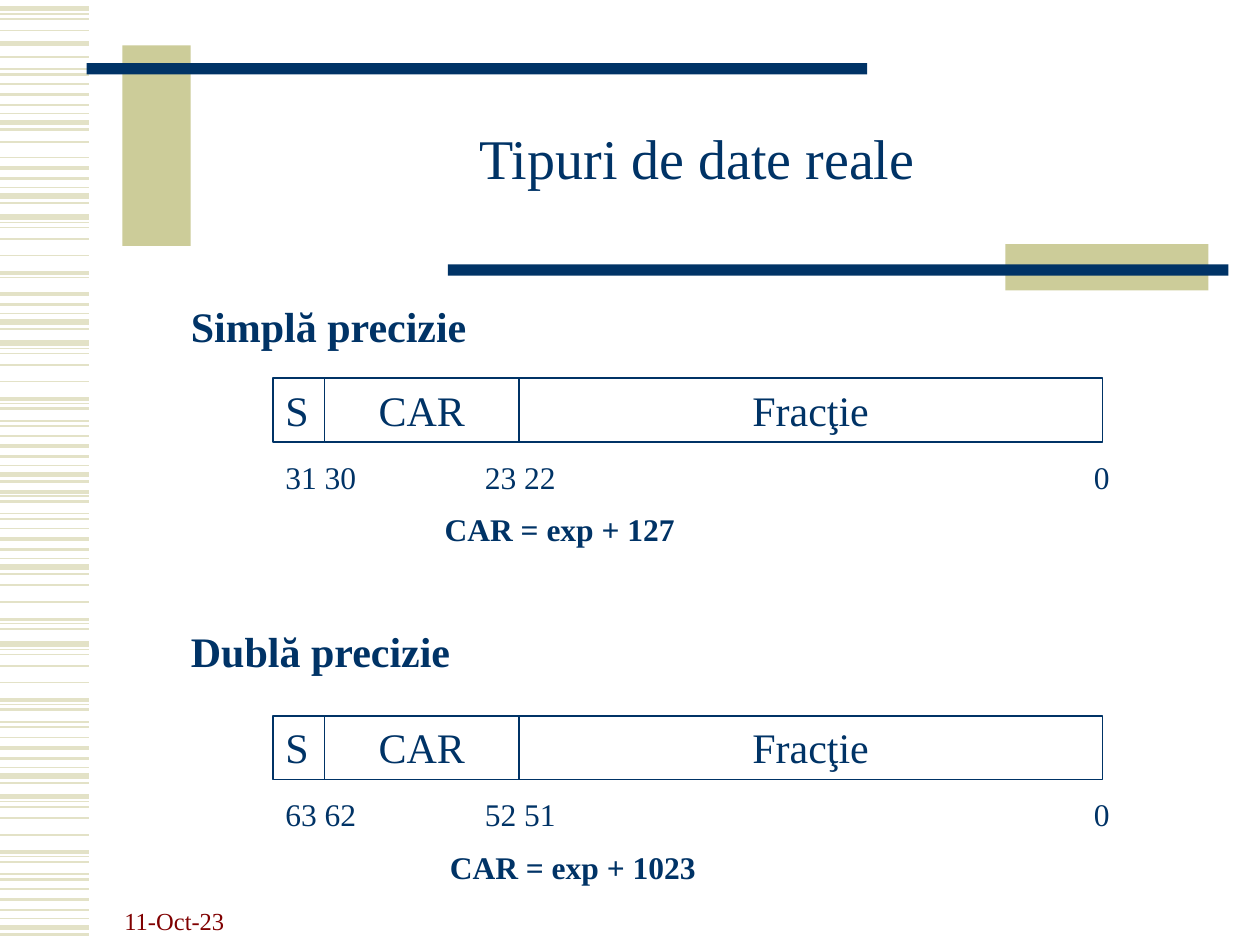
"""Build a slide on the bit layout of single and double precision real numbers."""
from dataclasses import dataclass

from pptx import Presentation
from pptx.dml.color import RGBColor
from pptx.enum.shapes import MSO_CONNECTOR, MSO_SHAPE
from pptx.enum.text import MSO_ANCHOR, PP_ALIGN
from pptx.oxml.ns import qn
from pptx.slide import Slide
from pptx.util import Pt
from lxml.etree import SubElement

NAVY = RGBColor(0x00, 0x33, 0x66)
KHAKI = RGBColor(0xCC, 0xCC, 0x99)
PALE = RGBColor(0xE3, 0xE2, 0xC7)
MAROON = RGBColor(0x80, 0x00, 0x00)

SHORT_BAND = [(-22, 1), (-16, 2.25), (-10, 1.5), (-5, 0.75), (0, 3), (4, 1.5)]
LONG_BAND = [(0, 3), (3, 0.75), (6, 1), (12.5, 1), (22, 1), (32, 2.25),
             (34.5, 0.75), (37.5, 1.5), (44.5, 0.75), (47.5, 1.5)]
STRIPES = [
    (-5, LONG_BAND[7:]), (5, LONG_BAND[:4]), (25, LONG_BAND[:1]),
    (59, LONG_BAND[4:5]), (70, SHORT_BAND), (112, SHORT_BAND),
    (124, LONG_BAND[:7]), (184, SHORT_BAND[1:]), (196, LONG_BAND),
    (249, LONG_BAND[5:]), (271, SHORT_BAND), (322, LONG_BAND[3:8]),
    (324, SHORT_BAND), (368, LONG_BAND), (443.5, SHORT_BAND),
    (455, LONG_BAND), (530, SHORT_BAND),
]
BARS = [(70, 26, 39, 114.5, KHAKI), (49.5, 36, 446, 6.5, NAVY),
        (574.5, 139.5, 116, 26.5, KHAKI), (256, 151, 446, 6.5, NAVY)]
FIELDS = [("S", 156, 29.5, PP_ALIGN.LEFT), ("CAR", 185.5, 111, PP_ALIGN.CENTER),
          ("Fracţie", 296.5, 333.5, PP_ALIGN.CENTER)]
BIT_LEFTS = (156, 270, 618)


@dataclass
class Painter:
    """Hold the slide and its text style."""

    s: Slide
    font: str = "Times New Roman"
    color: RGBColor = NAVY

    def fill_text(self, sp, text, size, align=PP_ALIGN.LEFT, bold=False,
                  color=None, anchor=MSO_ANCHOR.TOP):
        """Put one styled paragraph in a shape."""
        tf = sp.text_frame
        tf.word_wrap = True
        tf.vertical_anchor = anchor
        p = tf.paragraphs[0]
        p.text = text
        p.alignment = align
        p.font.name, p.font.size, p.font.bold = self.font, Pt(size), bold
        p.font.color.rgb = color or self.color
        return p

    def title(self, text, x, y, w, h):
        """Place and fill the title placeholder."""
        sp = self.s.shapes.title
        sp.left, sp.top, sp.width, sp.height = Pt(x), Pt(y), Pt(w), Pt(h)
        p = self.fill_text(sp, text, 32, PP_ALIGN.CENTER, anchor=MSO_ANCHOR.MIDDLE)
        p.line_spacing = 0.85

    def text(self, text, x, y, w, h, size, **style):
        """Add a text box."""
        sp = self.s.shapes.add_textbox(Pt(x), Pt(y), Pt(w), Pt(h))
        self.fill_text(sp, text, size, **style)

    def rect(self, x, y, w, h, fill=None):
        """Add a filled bar, or an outlined box when no fill is given."""
        sp = self.s.shapes.add_shape(MSO_SHAPE.RECTANGLE, Pt(x), Pt(y), Pt(w), Pt(h))
        sp.shadow.inherit = False
        if fill is None:
            sp.fill.background()
            sp.line.color.rgb = self.color
            sp.line.width = Pt(1)
        else:
            sp.fill.solid()
            sp.fill.fore_color.rgb = fill
            sp.line.fill.background()
        return sp

    def stripe(self, y, width):
        """Add one horizontal line at the left edge."""
        sp = self.s.shapes.add_connector(MSO_CONNECTOR.STRAIGHT, 0, Pt(y), Pt(51), Pt(y))
        sp.line.color.rgb = PALE
        sp.line.width = Pt(width)
        SubElement(sp._element.spPr, qn("a:effectLst"))

    def register(self, y, bits):
        """Add the field boxes of a number format and their bit positions."""
        for name, x, w, align in FIELDS:
            self.fill_text(self.rect(x, y, w, 36.5), name, 24, align)
        for x, label in zip(BIT_LEFTS, bits):
            self.text(label, x, y + 42, 72, 29, 18)


def main():
    """Draw the slide and save it."""
    prs = Presentation()
    prs.slide_width, prs.slide_height = Pt(720), Pt(540)
    painter = Painter(prs.slides.add_slide(prs.slide_layouts[5]))

    for base, band in STRIPES:
        for offset, width in band:
            painter.stripe(base + offset, width)
    for bar in BARS:
        painter.rect(*bar)

    painter.title("Tipuri de date reale", 108, 48, 581, 90)
    painter.text("11-Oct-23", 64, 502, 150, 36, 14, color=MAROON,
                 anchor=MSO_ANCHOR.BOTTOM)

    painter.text("Simplă precizie", 102, 168, 174, 36, 24, bold=True)
    painter.register(216, ("31 30", "23 22", "0"))
    painter.text("CAR = exp + 127", 247, 288, 148, 29, 18, bold=True)

    painter.text("Dublă precizie", 102, 354, 165, 36, 24, bold=True)
    painter.register(409, ("63 62", "52 51", "0"))
    painter.text("CAR = exp + 1023", 250, 481, 170, 29, 18, bold=True)

    prs.save("out.pptx")


if __name__ == "__main__":
    main()
